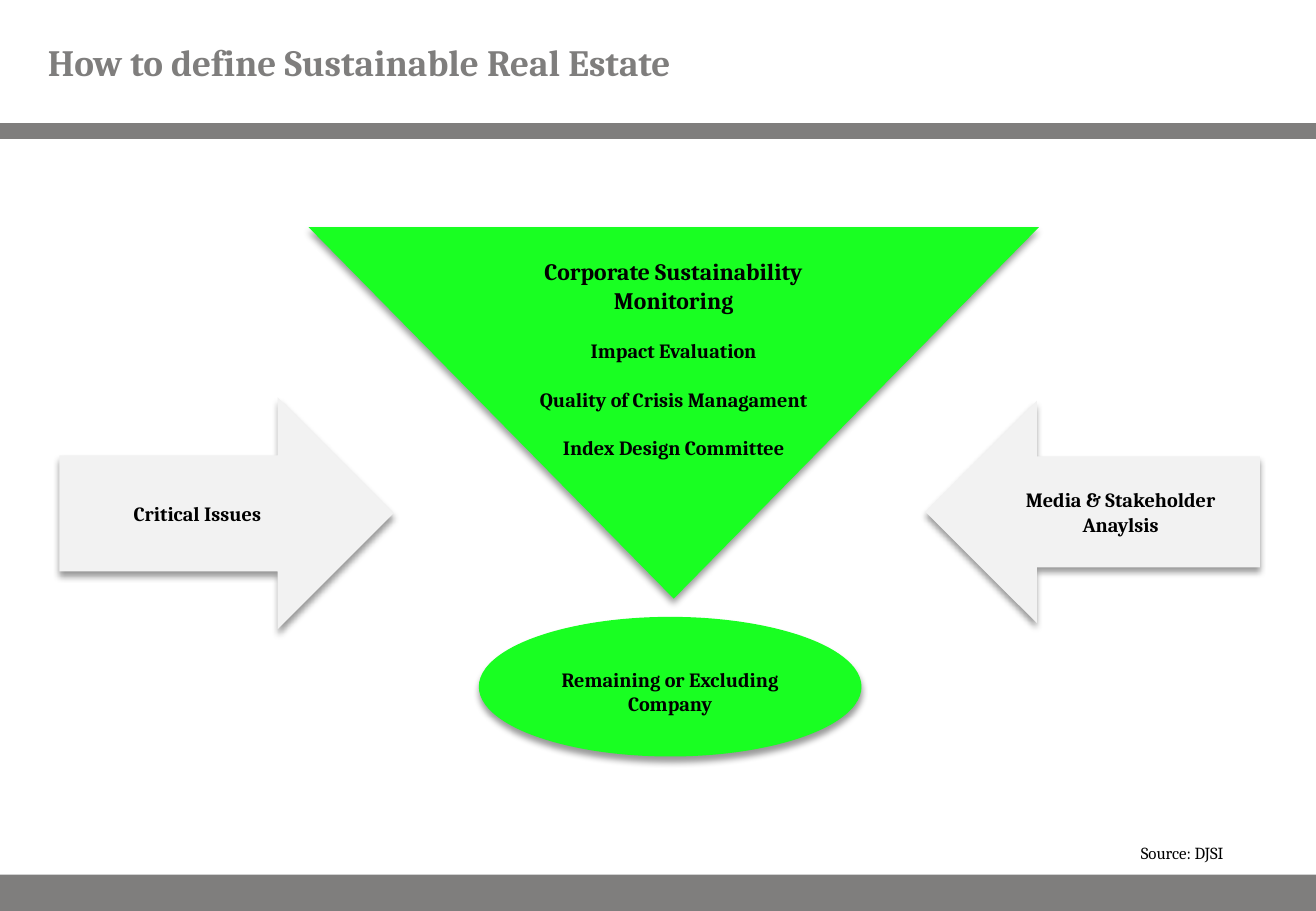
"""Build the slide on how sustainable real estate is defined."""
from dataclasses import dataclass

from lxml.etree import SubElement
from pptx import Presentation
from pptx.dml.color import RGBColor
from pptx.enum.shapes import MSO_CONNECTOR, MSO_SHAPE
from pptx.enum.text import MSO_ANCHOR, MSO_AUTO_SIZE, PP_ALIGN
from pptx.oxml.ns import qn
from pptx.util import Cm, Pt

WIDTH, HEIGHT = 27.51, 19.05
GRAY, GREEN, PALE, BLACK = "7F7E7D", "19FF22", "F2F2F2", "000000"
FONT = "Cambria"


@dataclass
class Stage:
    outline: MSO_SHAPE
    box: tuple[float, float, float, float]
    fill: str
    lines: list[tuple[str, int]]
    anchor: MSO_ANCHOR = MSO_ANCHOR.MIDDLE
    top_inset: float = 0.13


STAGES = [
    Stage(MSO_SHAPE.FLOWCHART_MERGE, (6.45, 4.75, 15.27, 7.77), GREEN,
          [("Corporate Sustainability Monitoring", 14), ("Impact Evaluation", 12),
           ("Quality of Crisis Managament", 12), ("Index Design Committee", 12)],
          MSO_ANCHOR.TOP, 0.63),
    Stage(MSO_SHAPE.OVAL, (10.01, 12.9, 8, 2.92), GREEN,
          [("Remaining or Excluding Company", 12)], MSO_ANCHOR.TOP, 0.63),
    Stage(MSO_SHAPE.RIGHT_ARROW, (1.24, 8.31, 6.99, 4.85), PALE,
          [("Critical Issues", 12)]),
    Stage(MSO_SHAPE.LEFT_ARROW, (19.35, 8.38, 6.99, 4.65), PALE,
          [("Media & Stakeholder Anaylsis", 12)]),
]


def paint(color_format, color: str) -> None:
    color_format.rgb = RGBColor.from_string(color)


def write(paragraph, text: str, *, size: float = 12, color: str = BLACK,
          bold: bool = False, align: PP_ALIGN = PP_ALIGN.LEFT,
          before: float = 0) -> None:
    paragraph.alignment = align
    paragraph.space_before = Pt(before)
    run = paragraph.add_run()
    run.text = text
    run.font.name = FONT
    run.font.size = Pt(size)
    run.font.bold = bold
    paint(run.font.color, color)


def add_filled(slide, outline: MSO_SHAPE, box: tuple, fill: str):
    shape = slide.shapes.add_shape(outline, *map(Cm, box))
    shape.shadow.inherit = False
    shape.fill.solid()
    paint(shape.fill.fore_color, fill)
    shape.line.fill.background()
    return shape


def cast_shadow(shape) -> None:
    effects = shape.element.spPr.find(qn("a:effectLst"))
    shadow = SubElement(effects, qn("a:outerShdw"), blurRad=str(Pt(4)),
                        dist=str(Pt(3)), dir="5400000", rotWithShape="0")
    tint = SubElement(shadow, qn("a:srgbClr"), val=BLACK)
    SubElement(tint, qn("a:alpha"), val="40000")


def add_stage(slide, stage: Stage) -> None:
    shape = add_filled(slide, stage.outline, stage.box, stage.fill)
    cast_shadow(shape)
    frame = shape.text_frame
    frame.word_wrap = True
    frame.vertical_anchor = stage.anchor
    frame.margin_top = Cm(stage.top_inset)
    for index, (text, size) in enumerate(stage.lines):
        paragraph = frame.add_paragraph() if index else frame.paragraphs[0]
        write(paragraph, text, size=size, bold=True, align=PP_ALIGN.CENTER,
              before=14.4 if index else 0)


def add_bands(slide) -> None:
    header = slide.shapes.add_connector(
        MSO_CONNECTOR.STRAIGHT, 0, Cm(2.74), Cm(WIDTH), Cm(2.74))
    header.line.width = Pt(10)
    paint(header.line.color, GRAY)
    SubElement(header.element.spPr, qn("a:effectLst"))
    add_filled(slide, MSO_SHAPE.RECTANGLE, (0, 18.29, WIDTH, 0.76), GRAY)


def set_title(slide, text: str) -> None:
    title = slide.shapes.title
    title.left, title.top, title.width, title.height = map(Cm, (0, 0, WIDTH, 2.57))
    frame = title.text_frame
    frame.auto_size = MSO_AUTO_SIZE.NONE
    frame.word_wrap = True
    frame.vertical_anchor = MSO_ANCHOR.MIDDLE
    frame.margin_left = frame.margin_right = Cm(1)
    frame.margin_top = frame.margin_bottom = 0
    write(frame.paragraphs[0], text, size=22, color=GRAY, bold=True)


def add_source(slide, text: str) -> None:
    source = slide.shapes.add_textbox(*map(Cm, (23.6, 17.5, 3.91, 0.69)))
    source.text_frame.word_wrap = True
    write(source.text_frame.paragraphs[0], text, size=10)


def main() -> None:
    deck = Presentation()
    deck.slide_width, deck.slide_height = Cm(WIDTH), Cm(HEIGHT)
    slide = deck.slides.add_slide(deck.slide_layouts.get_by_name("Title Only"))
    add_bands(slide)
    for stage in STAGES:
        add_stage(slide, stage)
    add_source(slide, "Source: DJSI")
    set_title(slide, "How to define Sustainable Real Estate")
    deck.save("out.pptx")


if __name__ == "__main__":
    main()
